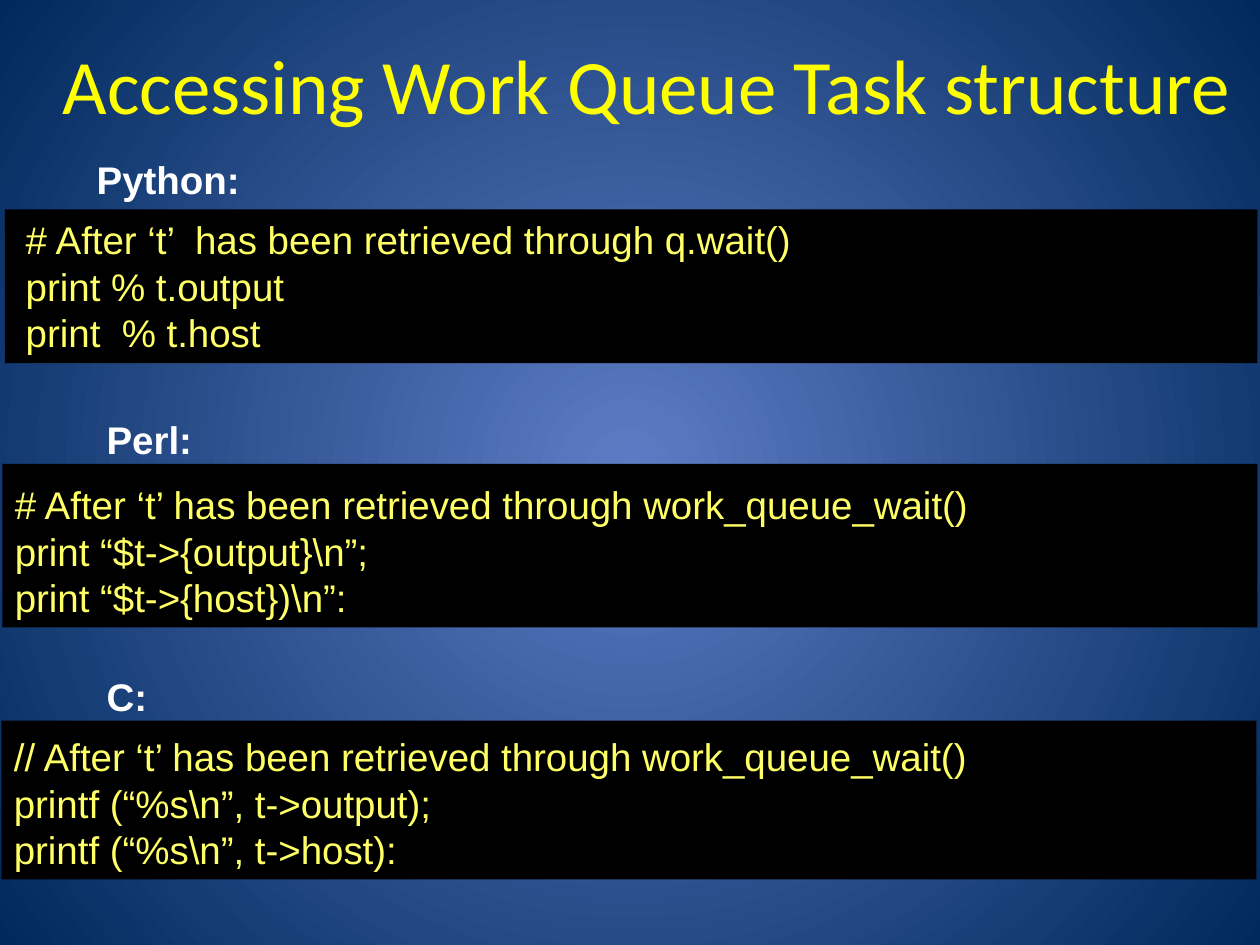
from dataclasses import dataclass

import lxml.etree
import pptx
import pptx.dml.color
import pptx.enum.shapes
import pptx.enum.text
import pptx.oxml.ns
import pptx.slide
import pptx.util
from pptx.util import Cm

COLORS = {
    "center": "5E7CC5",
    "edge": "00295C",
    "title": "FFFF00",
    "panel": "000000",
    "code": "FFFF66",
    "outline": "FFFF00",
    "label": "FFFFFF",
}
TEXT_INSET = 0.25
LABEL_WIDTH, LABEL_HEIGHT = 8.84, 1.19
CODE_HEIGHT = 3.07


@dataclass
class Box:
    left: float
    top: float
    width: float
    height: float

    def lengths(self) -> tuple:
        return Cm(self.left), Cm(self.top), Cm(self.width), Cm(self.height)


@dataclass
class Example:
    language: str
    lines: list[str]
    label: Box
    panel: Box
    code: Box
    indent: float = 0


EXAMPLES = [
    Example(
        "Python:",
        ["# After ‘t’  has been retrieved through q.wait()", "print % t.output", "print  % t.host"],
        Box(1.7, 3.02, LABEL_WIDTH, LABEL_HEIGHT),
        Box(0.1, 4.22, 25.25, 3.1),
        Box(0.05, 4.24, 23.85, CODE_HEIGHT),
        indent=0.22,
    ),
    Example(
        "Perl:",
        [
            "# After ‘t’ has been retrieved through work_queue_wait()",
            "print “$t->{output}\\n”;",
            "print “$t->{host})\\n”:",
        ],
        Box(1.9, 8.26, LABEL_WIDTH, LABEL_HEIGHT),
        Box(0.05, 9.35, 25.3, 3.3),
        Box(0.05, 9.58, 25.15, CODE_HEIGHT),
    ),
    Example(
        "C:",
        [
            "// After ‘t’ has been retrieved through work_queue_wait()",
            "printf (“%s\\n”, t->output);",
            "printf (“%s\\n”, t->host):",
        ],
        Box(1.9, 13.44, LABEL_WIDTH, LABEL_HEIGHT),
        Box(0.03, 14.53, 25.3, 3.2),
        Box(0.03, 14.66, 25.15, CODE_HEIGHT),
    ),
]


def color(name: str) -> pptx.dml.color.RGBColor:
    return pptx.dml.color.RGBColor.from_string(COLORS[name])


def format_runs(text_frame, size: float, font: str, color_name: str, bold: bool = False) -> None:
    for paragraph in text_frame.paragraphs:
        for run in paragraph.runs:
            run.font.size = pptx.util.Pt(size)
            run.font.name = font
            run.font.bold = bold
            run.font.color.rgb = color(color_name)


def outline_runs(text_frame) -> None:
    qn = pptx.oxml.ns.qn
    for paragraph in text_frame.paragraphs:
        for run in paragraph.runs:
            line = lxml.etree.Element(qn("a:ln"), w=str(pptx.util.Pt(0.75)))
            fill = lxml.etree.SubElement(line, qn("a:solidFill"))
            lxml.etree.SubElement(fill, qn("a:srgbClr"), val=COLORS["outline"])
            run.font._element.insert(0, line)


def set_background(slide: pptx.slide.Slide) -> None:
    qn = pptx.oxml.ns.qn
    fill = slide.background.fill
    fill.gradient()
    for stop, position, name in zip(fill.gradient_stops, (0, 1), ("center", "edge")):
        stop.position = position
        stop.color.rgb = color(name)
    gradient = next(slide.element.iter(qn("a:gradFill")))
    gradient.remove(gradient.find(qn("a:lin")))
    circle = lxml.etree.SubElement(gradient, qn("a:path"), path="circle")
    sides = dict.fromkeys("ltrb", "50000")
    lxml.etree.SubElement(circle, qn("a:fillToRect"), sides)


def add_title(slide: pptx.slide.Slide, text: str) -> None:
    title = slide.shapes.title
    title.left, title.top, title.width, title.height = Box(0.89, 0.2, 24.31, 2.97).lengths()
    title.text_frame.text = text
    title.text_frame.vertical_anchor = pptx.enum.text.MSO_ANCHOR.MIDDLE
    title.text_frame.paragraphs[0].alignment = pptx.enum.text.PP_ALIGN.CENTER
    format_runs(title.text_frame, 44, "Calibri", "title")


def add_text(slide: pptx.slide.Slide, box: Box, text: str, color_name: str,
             bold: bool = False, indent: float = 0):
    text_frame = slide.shapes.add_textbox(*box.lengths()).text_frame
    text_frame.word_wrap = True
    text_frame.auto_size = pptx.enum.text.MSO_AUTO_SIZE.SHAPE_TO_FIT_TEXT
    text_frame.margin_left = Cm(TEXT_INSET + indent)
    text_frame.text = text
    format_runs(text_frame, 22, "Arial", color_name, bold)
    return text_frame


def add_example(slide: pptx.slide.Slide, example: Example) -> None:
    panel = slide.shapes.add_shape(
        pptx.enum.shapes.MSO_SHAPE.RECTANGLE, *example.panel.lengths()
    )
    panel.shadow.inherit = False
    panel.fill.solid()
    panel.fill.fore_color.rgb = color("panel")
    panel.line.fill.background()
    code = add_text(slide, example.code, "\n".join(example.lines), "code", indent=example.indent)
    outline_runs(code)
    add_text(slide, example.label, example.language, "label", bold=True)


def main() -> None:
    presentation = pptx.Presentation()
    presentation.slide_width = Cm(25.4)
    presentation.slide_height = Cm(19.05)
    slide = presentation.slides.add_slide(presentation.slide_layouts.get_by_name("Title Only"))
    set_background(slide)
    add_title(slide, "Accessing Work Queue Task structure")
    for example in EXAMPLES:
        add_example(slide, example)
    presentation.save("out.pptx")


if __name__ == "__main__":
    main()
